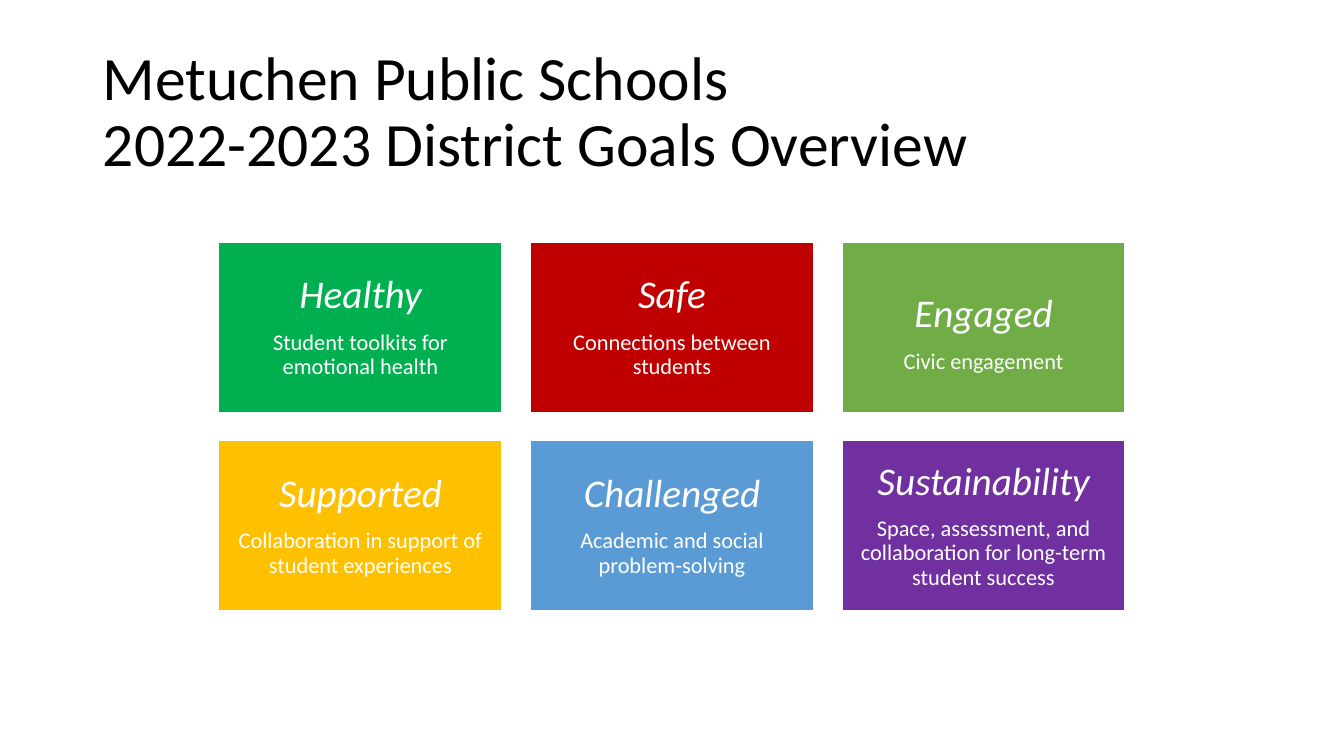
from pptx import Presentation
from pptx import util as u
from pptx.dml.color import RGBColor
from pptx.enum import shapes, text

FONT = "Calibri"
BLACK = RGBColor(0x00, 0x00, 0x00)
WHITE = RGBColor(0xFF, 0xFF, 0xFF)
GREEN = RGBColor(0x00, 0xB0, 0x50)
RED = RGBColor(0xC0, 0x00, 0x00)
OLIVE = RGBColor(0x70, 0xAD, 0x47)
GOLD = RGBColor(0xFF, 0xC0, 0x00)
BLUE = RGBColor(0x5B, 0x9B, 0xD5)
PURPLE = RGBColor(0x70, 0x30, 0xA0)

# Goal, focus, fill, extra top inset
GOALS = [
    ("Healthy", "Student toolkits for emotional health", GREEN, 0),
    ("Safe", "Connections between students", RED, 0),
    ("Engaged", "Civic engagement", OLIVE, 0.14),
    ("Supported", "Collaboration in support of student experiences", GOLD, 0),
    ("Challenged", "Academic and social problem-solving", BLUE, 0),
    ("Sustainability", "Space, assessment, and collaboration for "
     "long-term student success", PURPLE, 0),
]
COLS = 3
LEFT, TOP = 2.17, 2.4
WIDTH, HEIGHT = 2.81, 1.69
GAP = 0.28
INSET = 0.12


def style(par, size, color, italic=False):
    par.line_spacing = 0.9
    for run in par.runs:
        font = run.font
        font.name, font.size, font.italic = FONT, u.Pt(size), italic
        font.color.rgb = color


def add_title(slide, words):
    title = slide.shapes.title
    title.left, title.top = u.Inches(0.92), u.Inches(0.4)
    title.width, title.height = u.Inches(11.5), u.Inches(1.45)
    frame = title.text_frame
    frame.text = words
    frame.word_wrap = True
    frame.auto_size = text.MSO_AUTO_SIZE.NONE
    frame.vertical_anchor = text.MSO_ANCHOR.MIDDLE
    par = frame.paragraphs[0]
    par.alignment = text.PP_ALIGN.LEFT
    style(par, 44, BLACK)


def add_card(slide, left, top, goal, focus, fill, drop):
    card = slide.shapes.add_shape(
        shapes.MSO_SHAPE.RECTANGLE, u.Inches(left), u.Inches(top),
        u.Inches(WIDTH), u.Inches(HEIGHT))
    card.shadow.inherit = False
    card.fill.solid()
    card.fill.fore_color.rgb = fill
    card.line.color.rgb = WHITE
    card.line.width = u.Pt(1)

    frame = card.text_frame
    frame.word_wrap = True
    frame.vertical_anchor = text.MSO_ANCHOR.MIDDLE
    frame.margin_left = frame.margin_right = u.Inches(INSET)
    frame.margin_top = u.Inches(INSET + drop)
    frame.margin_bottom = u.Inches(INSET)
    frame.text = f"{goal}\n{focus}"
    head, body = frame.paragraphs
    head.alignment = body.alignment = text.PP_ALIGN.CENTER
    head.space_after = u.Pt(9.8)
    style(head, 28, WHITE, True)
    style(body, 16, WHITE)


def main():
    deck = Presentation()
    deck.slide_width, deck.slide_height = u.Inches(13.33), u.Inches(7.5)
    slide = deck.slides.add_slide(deck.slide_layouts[5])
    add_title(slide, "Metuchen Public Schools\v2022-2023 District Goals Overview")

    # Grid of goal cards
    for i, goal in enumerate(GOALS):
        row, col = divmod(i, COLS)
        add_card(slide, LEFT + col * (WIDTH + GAP),
                 TOP + row * (HEIGHT + GAP), *goal)
    deck.save("out.pptx")


if __name__ == "__main__":
    main()
